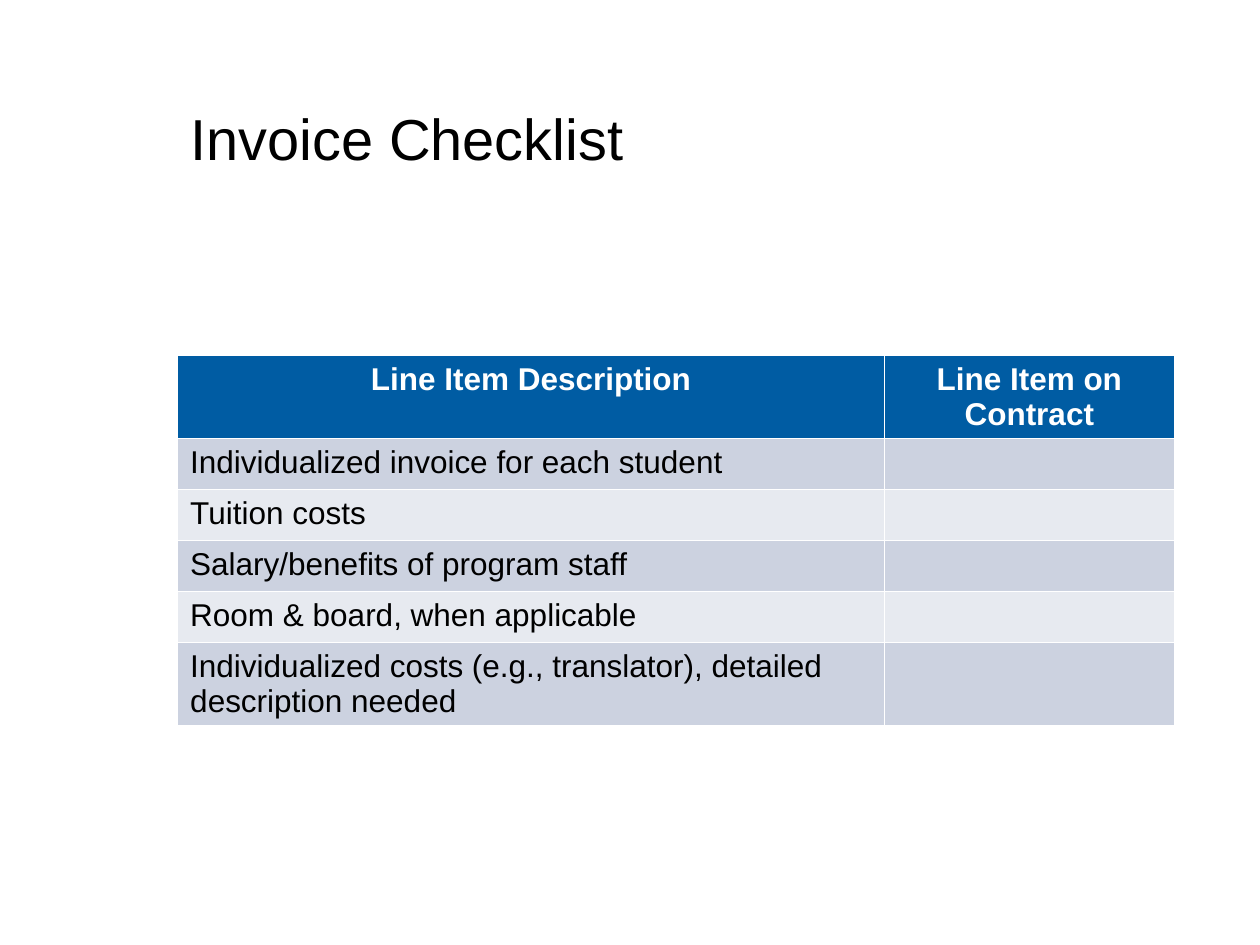
from pptx import Presentation
from pptx.dml.color import RGBColor
from pptx.enum.text import MSO_ANCHOR, PP_ALIGN
from pptx.util import Inches, Pt

LEFT, WIDTH = Inches(1.41), Inches(7.91)
HEADER_FILL = "005CA3"
BAND_FILLS = ["CCD2E0", "E7EAF0"]
COLUMN_WIDTHS = [5.61, 2.3]
HEADINGS = ["Line Item Description", "Line Item on Contract"]
LINE_ITEMS = [
    "Individualized invoice for each student",
    "Tuition costs",
    "Salary/benefits of program staff",
    "Room & board, when applicable",
    "Individualized costs (e.g., translator), detailed description needed",
]


def color(hex_value):
    return RGBColor.from_string(hex_value)


def format_text(paragraph, text_color, **values):
    paragraph.font.color.rgb = color(text_color)
    for name, value in {"name": "Arial", **values}.items():
        setattr(paragraph.font, name, value)


prs = Presentation()
prs.slide_width, prs.slide_height = Inches(10), Inches(7.5)
slide = prs.slides.add_slide(prs.slide_layouts.get_by_name("Title Only"))

title = slide.shapes.title
title.left, title.top, title.width, title.height = LEFT, Inches(0.4), WIDTH, Inches(1.45)
title.text_frame.text = "Invoice Checklist"
title.text_frame.vertical_anchor = MSO_ANCHOR.MIDDLE
heading = title.text_frame.paragraphs[0]
heading.alignment = PP_ALIGN.LEFT
heading.line_spacing = 0.9
format_text(heading, "000000", size=Pt(33))

# The default table style supplies the white rules, thicker below the header.
rows = [HEADINGS] + [[item, ""] for item in LINE_ITEMS]
checklist = slide.shapes.add_table(
    len(rows), len(HEADINGS), LEFT, Inches(2.82), WIDTH, Inches(2.43)
).table
for column, width in zip(checklist.columns, COLUMN_WIDTHS):
    column.width = Inches(width)

for row_index, row in enumerate(rows):
    is_header = row_index == 0
    fill = HEADER_FILL if is_header else BAND_FILLS[(row_index - 1) % 2]
    for column_index, text in enumerate(row):
        cell = checklist.cell(row_index, column_index)
        cell.fill.solid()
        cell.fill.fore_color.rgb = color(fill)
        cell.text = text
        paragraph = cell.text_frame.paragraphs[0]
        paragraph.alignment = PP_ALIGN.CENTER if is_header else PP_ALIGN.LEFT
        format_text(paragraph, "FFFFFF" if is_header else "000000",
                    size=Pt(18), bold=is_header)

prs.save("out.pptx")
